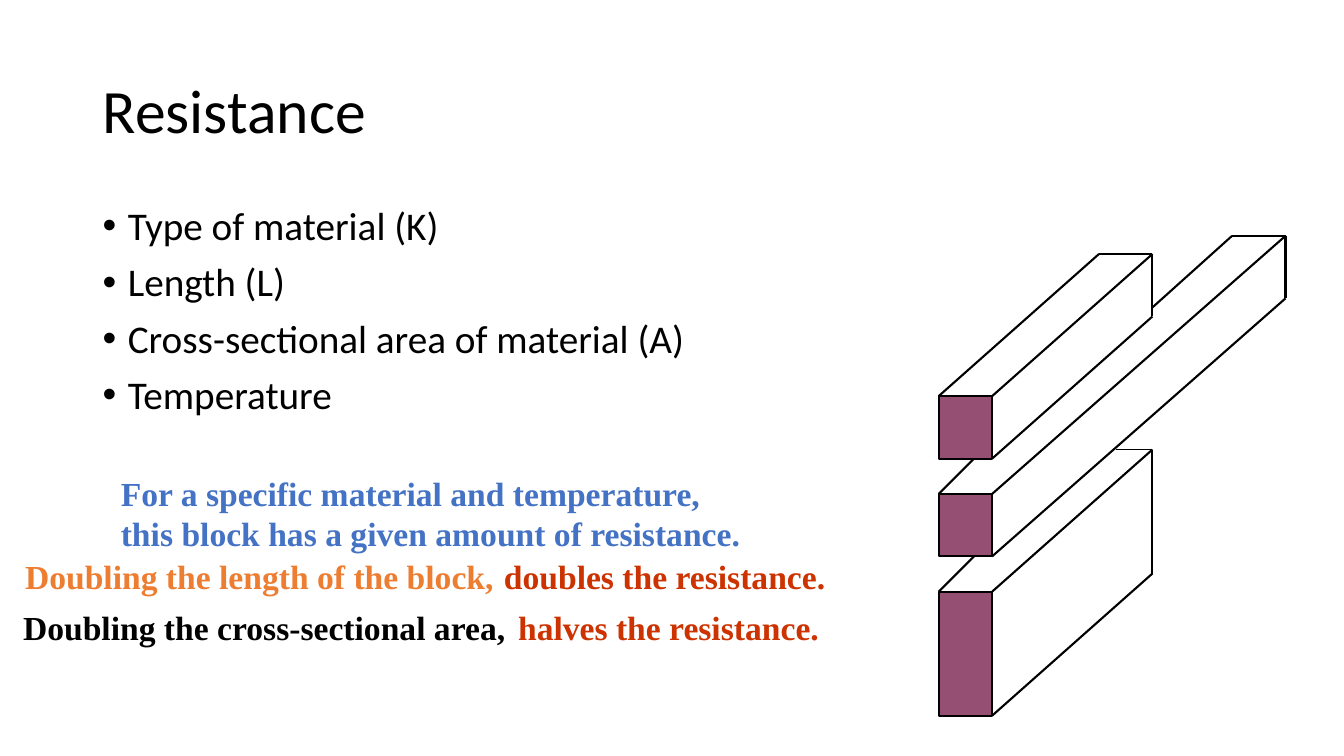
from dataclasses import dataclass

from lxml.etree import SubElement
from pptx import Presentation
from pptx.dml.color import RGBColor
from pptx.enum.shapes import MSO_CONNECTOR, MSO_SHAPE
from pptx.enum.text import MSO_ANCHOR as Anchor, MSO_AUTO_SIZE as AutoSize
from pptx.oxml.ns import qn
from pptx.slide import Slide
from pptx.text.text import TextFrame
from pptx.util import Inches, Pt

Point = tuple[float, float]
Edge = tuple[Point, Point]


@dataclass(frozen=True)
class Theme:
    """Fonts, type sizes, line widths and colours of the slide."""
    sans: str = "Calibri"
    serif: str = "Times New Roman"
    title_size: float = 44
    body_size: float = 28
    remark_size: float = 24
    edge_width: float = 1.5
    thin_width: float = 0.75
    ink: str = "000000"
    face: str = "954F72"
    given: str = "4472C4"
    longer: str = "ED7D31"
    result: str = "CC3300"


@dataclass(frozen=True)
class Remark:
    """A coloured statement about one of the blocks."""
    left: float
    top: float
    width: float
    height: float
    wording: str
    colour: str


@dataclass(frozen=True)
class Block:
    """A bar in oblique view, with the visible parts of its rear top edges."""
    top: float
    height: float
    run: float
    rise: float
    left_edges: tuple[Edge, ...]
    back_start: float
    back_width: float


THEME = Theme()
FRONT_LEFT, FRONT_WIDTH = 9.31, 0.53
FRONT_RIGHT = FRONT_LEFT + FRONT_WIDTH
FACTORS = ("Type of material (K)", "Length (L)",
           "Cross-sectional area of material (A)", "Temperature")
BLOCKS = (
    Block(5.87, 1.23, 1.59, 1.41, (((9.31, 5.87), (9.75, 5.43)),), 11.07, THEME.thin_width),
    Block(4.9, 0.62, 2.91, 2.56,
          (((9.31, 4.9), (9.75, 4.46)), ((12.22, 2.34), (11.43, 3.05))),
          12.22, THEME.edge_width),
    Block(3.93, 0.62, 1.59, 1.41, (((9.31, 3.93), (10.9, 2.52)),), 10.9, THEME.edge_width),
)
REMARKS = (
    Remark(1.1, 4.64, 6.35, 0.9,
           "For a specific material and temperature,\n"
           "this block has a given amount of resistance.", THEME.given),
    Remark(0.15, 5.47, 4.93, 0.5, "Doubling the length of the block,", THEME.longer),
    Remark(0.13, 5.97, 5.08, 0.5, "Doubling the cross-sectional area,", THEME.ink),
    Remark(4.9, 5.47, 3.4, 0.5, "doubles the resistance.", THEME.result),
    Remark(5.04, 5.97, 3.19, 0.5, "halves the resistance.", THEME.result),
)


def add_text(slide: Slide, left: float, top: float, width: float, height: float,
             wording: str, font: str, size: float, colour: str,
             bold: bool = False) -> TextFrame:
    """Add a wrapping text box with uniformly formatted runs."""
    frame = slide.shapes.add_textbox(
        Inches(left), Inches(top), Inches(width), Inches(height)).text_frame
    frame.word_wrap = True
    frame.text = wording
    for paragraph in frame.paragraphs:
        for run in paragraph.runs:
            run.font.name = font
            run.font.size = Pt(size)
            run.font.bold = bold
            run.font.color.rgb = RGBColor.from_string(colour)
    return frame


def add_title(slide: Slide) -> None:
    """Add the heading."""
    heading = add_text(slide, 0.92, 0.4, 11.5, 1.45, "Resistance",
                       THEME.sans, THEME.title_size, THEME.ink)
    heading.vertical_anchor = Anchor.MIDDLE
    heading.paragraphs[0].line_spacing = 0.9


def add_factors(slide: Slide) -> None:
    """Add the bulleted factors that determine resistance."""
    factors = add_text(slide, 0.92, 2, 7.26, 4.76, "\n".join(FACTORS),
                       THEME.sans, THEME.body_size, THEME.ink)
    for factor in factors.paragraphs:
        factor.line_spacing = 0.9
        factor.space_before = Pt(10)
        properties = factor._p.get_or_add_pPr()
        properties.set("marL", str(Inches(0.25)))
        properties.set("indent", str(Inches(-0.25)))
        SubElement(properties, qn("a:buFont")).set("typeface", "Arial")
        SubElement(properties, qn("a:buChar")).set("char", "•")


def add_remark(slide: Slide, remark: Remark) -> None:
    """Add one bold statement that does not wrap."""
    frame = add_text(slide, remark.left, remark.top, remark.width, remark.height,
                     remark.wording, THEME.serif, THEME.remark_size,
                     remark.colour, bold=True)
    frame.word_wrap = False
    frame.auto_size = AutoSize.SHAPE_TO_FIT_TEXT


def add_edge(slide: Slide, edge: Edge, width: float = THEME.edge_width) -> None:
    """Draw one straight edge of a block."""
    (x1, y1), (x2, y2) = edge
    line = slide.shapes.add_connector(
        MSO_CONNECTOR.STRAIGHT, Inches(x1), Inches(y1), Inches(x2), Inches(y2))
    line.line.color.rgb = RGBColor.from_string(THEME.ink)
    line.line.width = Pt(width)
    SubElement(line._element.spPr, qn("a:effectLst"))


def add_block(slide: Slide, block: Block) -> None:
    """Draw the front face of a block and the edges receding from it."""
    bottom = block.top + block.height
    far_right = FRONT_RIGHT + block.run
    far_top, far_bottom = block.top - block.rise, bottom - block.rise
    for edge in block.left_edges:
        add_edge(slide, edge)
    front = slide.shapes.add_shape(
        MSO_SHAPE.RECTANGLE, Inches(FRONT_LEFT), Inches(block.top),
        Inches(FRONT_WIDTH), Inches(block.height))
    front.shadow.inherit = False
    front.fill.solid()
    front.fill.fore_color.rgb = RGBColor.from_string(THEME.face)
    front.line.color.rgb = RGBColor.from_string(THEME.ink)
    front.line.width = Pt(THEME.edge_width)
    add_edge(slide, ((FRONT_RIGHT, block.top), (far_right, far_top)))
    add_edge(slide, ((FRONT_RIGHT, bottom), (far_right, far_bottom)))
    add_edge(slide, ((far_right, far_top), (far_right, far_bottom)))
    add_edge(slide, ((block.back_start, far_top), (far_right, far_top)), block.back_width)


def main() -> None:
    """Build and save the resistance slide."""
    deck = Presentation()
    deck.slide_width, deck.slide_height = Inches(13.33), Inches(7.5)
    slide = deck.slides.add_slide(deck.slide_layouts[6])
    add_title(slide)
    add_factors(slide)
    for block in BLOCKS:
        add_block(slide, block)
    for remark in REMARKS:
        add_remark(slide, remark)
    deck.save("out.pptx")


if __name__ == "__main__":
    main()
